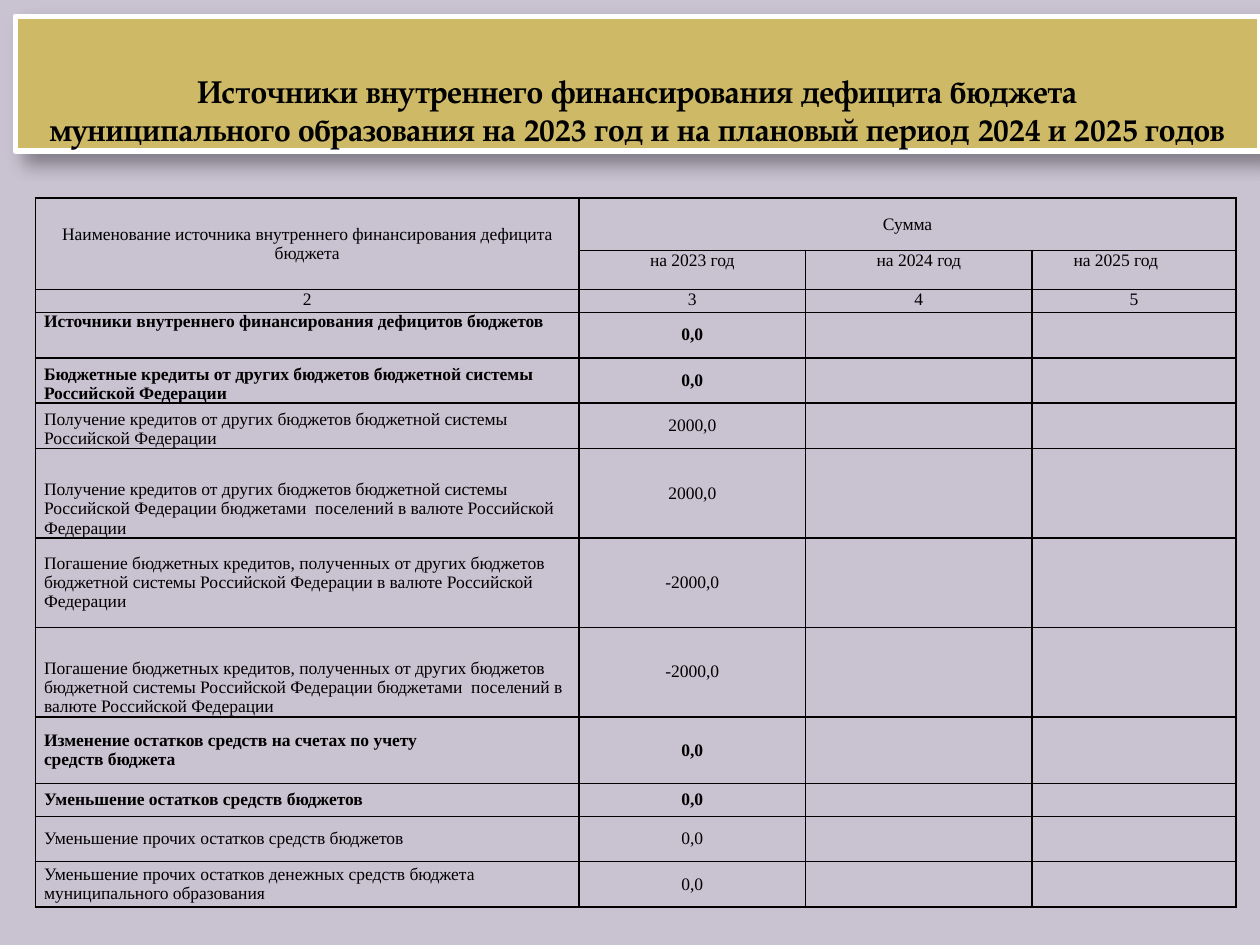
from lxml import etree
from pptx import Presentation
from pptx.dml.color import RGBColor
from pptx.enum.shapes import MSO_SHAPE
from pptx.enum.text import MSO_ANCHOR, PP_ALIGN
from pptx.oxml.ns import qn
from pptx.util import Inches, Pt

RECTANGLE = MSO_SHAPE.RECTANGLE
TOP, MIDDLE, BOTTOM = MSO_ANCHOR.TOP, MSO_ANCHOR.MIDDLE, MSO_ANCHOR.BOTTOM
LEFT, CENTER = PP_ALIGN.LEFT, PP_ALIGN.CENTER

WIDTH, HEIGHT = 10, 7.5
BODY_FONT, TITLE_FONT = "Times New Roman", "TeX Gyre Pagella"
BLACK, WHITE, GOLD, LILAC = "000000", "FFFFFF", "CEB966", "C9C2D1"

TITLE_LINES = [
    "Источники внутреннего финансирования дефицита бюджета",
    "муниципального образования на 2023 год и на плановый период 2024 и 2025 годов",
]
COLUMN_WIDTHS = [4.32, 1.8, 1.8, 1.62]
HEADER_HEIGHTS = [0.42, 0.31, 0.18]
NAME_HEADER = "Наименование источника внутреннего финансирования дефицита бюджета"
YEARS = ["на 2023 год", "на 2024 год", "на 2025 год"]
COLUMN_NUMBERS = ["2", "3", "4", "5"]
BORROWING = "Получение кредитов от других бюджетов бюджетной системы Российской Федерации"
REPAYMENT = "Погашение бюджетных кредитов, полученных от других бюджетов бюджетной системы Российской Федерации"
SETTLEMENTS = " бюджетами  поселений в валюте Российской Федерации"
SOURCES = [
    (0.36, "Источники внутреннего финансирования дефицитов бюджетов", "0,0", True, TOP),
    (0.36, "Бюджетные кредиты от других бюджетов бюджетной системы Российской Федерации", "0,0", True, BOTTOM),
    (0.36, BORROWING, "2000,0", False, BOTTOM),
    (0.71, BORROWING + SETTLEMENTS, "2000,0", False, BOTTOM),
    (0.71, REPAYMENT + " в валюте Российской Федерации", "-2000,0", False, MIDDLE),
    (0.71, REPAYMENT + SETTLEMENTS, "-2000,0", False, BOTTOM),
    (0.53, "Изменение остатков средств на счетах по учету\nсредств бюджета", "0,0", True, MIDDLE),
    (0.26, "Уменьшение остатков средств бюджетов", "0,0", True, MIDDLE),
    (0.36, "Уменьшение прочих остатков средств бюджетов", "0,0", False, MIDDLE),
    (0.36, "Уменьшение прочих остатков денежных средств бюджета муниципального образования", "0,0", False, MIDDLE),
]


def color(value):
    return RGBColor.from_string(value)


def add_run(paragraph, text, font, size, bold):
    run = paragraph.add_run()
    run.text = text
    run.font.name = font
    run.font.size = Pt(size)
    run.font.bold = bold
    run.font.color.rgb = color(BLACK)


def add_shadow(shape, opacity, blur, distance, angle):
    shape.shadow.inherit = False
    effects = shape._element.spPr.find(qn("a:effectLst"))
    shadow = etree.SubElement(
        effects, qn("a:outerShdw"), blurRad=str(Pt(blur)), dist=str(Pt(distance)),
        dir=str(angle * 60000), algn="tl", rotWithShape="0")
    tint = etree.SubElement(shadow, qn("a:srgbClr"), val=BLACK)
    etree.SubElement(tint, qn("a:alpha"), val=str(opacity * 1000))


def add_title(slide, left, top, width, height):
    shape = slide.shapes.add_shape(
        RECTANGLE, Inches(left), Inches(top), Inches(width), Inches(height))
    shape.fill.solid()
    shape.fill.fore_color.rgb = color(GOLD)
    shape.line.color.rgb = color(WHITE)
    shape.line.width = Pt(3)
    add_shadow(shape, 35, 10.2, 8, 45)
    frame = shape.text_frame
    frame.word_wrap = True
    frame.vertical_anchor = BOTTOM
    frame.margin_top = 0
    frame.margin_bottom = Inches(0.03)
    paragraph = frame.paragraphs[0]
    paragraph.alignment = CENTER
    for index, line in enumerate(TITLE_LINES):
        if index:
            paragraph.add_line_break()
        add_run(paragraph, line, TITLE_FONT, 18, True)


def format_cell(cell):
    cell.margin_left = cell.margin_right = Inches(0.07)
    cell.margin_top = cell.margin_bottom = 0
    cell.fill.background()
    properties = cell._tc.get_or_add_tcPr()
    for index, side in enumerate(("lnL", "lnR", "lnT", "lnB")):
        border = etree.Element(qn("a:" + side), w=str(Pt(1)))
        fill = etree.SubElement(border, qn("a:solidFill"))
        etree.SubElement(fill, qn("a:srgbClr"), val=BLACK)
        properties.insert(index, border)
    ending = cell.text_frame.paragraphs[0]._p.get_or_add_endParaRPr()
    ending.set("sz", "1000")


def write_cell(cell, text, alignment=CENTER, anchor=MIDDLE, bold=False):
    cell.vertical_anchor = anchor
    frame = cell.text_frame
    for index, line in enumerate(text.split("\n")):
        paragraph = frame.add_paragraph() if index else frame.paragraphs[0]
        paragraph.alignment = alignment
        add_run(paragraph, line, BODY_FONT, 10, bold)


def write_header(table):
    table.cell(0, 0).merge(table.cell(1, 0))
    table.cell(0, 1).merge(table.cell(0, 3))
    write_cell(table.cell(0, 0), NAME_HEADER)
    write_cell(table.cell(0, 1), "Сумма")
    for column, year in enumerate(YEARS, 1):
        write_cell(table.cell(1, column), year, anchor=TOP)
    table.cell(1, 3).margin_right = Inches(0.36)
    for column, number in enumerate(COLUMN_NUMBERS):
        write_cell(table.cell(2, column), number, anchor=TOP)


def add_sources_table(slide, left, top, width):
    heights = HEADER_HEIGHTS + [source[0] for source in SOURCES]
    table = slide.shapes.add_table(
        len(heights), len(COLUMN_WIDTHS), Inches(left), Inches(top),
        Inches(width), Inches(sum(heights))).table
    table.first_row = table.horz_banding = False
    for column, share in zip(table.columns, COLUMN_WIDTHS):
        column.width = Inches(width * share / sum(COLUMN_WIDTHS))
    for row, height in zip(table.rows, heights):
        row.height = Inches(height)
    for cell in table.iter_cells():
        format_cell(cell)
    write_header(table)
    for row, (_, name, amount, bold, anchor) in enumerate(SOURCES, len(HEADER_HEIGHTS)):
        write_cell(table.cell(row, 0), name, LEFT, anchor, bold)
        write_cell(table.cell(row, 1), amount, bold=bold)


def main():
    presentation = Presentation()
    presentation.slide_width = Inches(WIDTH)
    presentation.slide_height = Inches(HEIGHT)
    slide = presentation.slides.add_slide(presentation.slide_layouts[6])
    slide.background.fill.solid()
    slide.background.fill.fore_color.rgb = color(LILAC)
    add_title(slide, 0.12, 0.13, WIDTH - 0.12, 1.07)
    add_sources_table(slide, 0.28, 1.57, 9.53)
    presentation.save("out.pptx")


if __name__ == "__main__":
    main()
